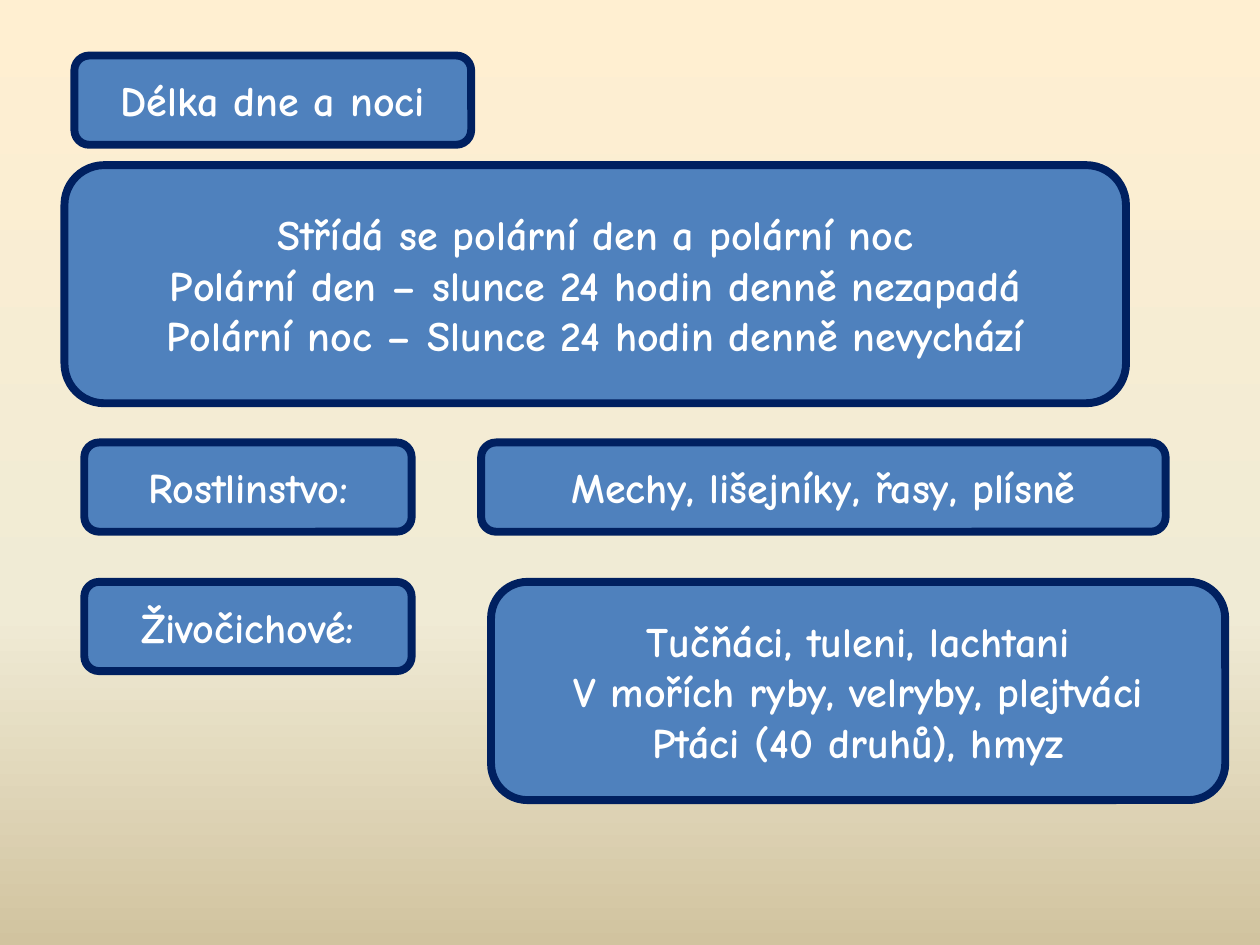
from copy import deepcopy
from pptx import Presentation
from pptx.dml.color import RGBColor as RGB
from pptx.enum.shapes import MSO_SHAPE as Shape
from pptx.enum.text import MSO_ANCHOR as Anchor, PP_ALIGN as Align
from pptx.oxml.ns import qn
from pptx.util import Inches, Pt

BLUE = RGB(0x4F, 0x81, 0xBD)
NAVY = RGB(0x00, 0x20, 0x60)
WHITE = RGB(0xFF, 0xFF, 0xFF)
SKY = [
    (0, RGB(0xFF, 0xEF, 0xD1)),
    (0.65, RGB(0xF0, 0xEB, 0xD5)),
    (1, RGB(0xD1, 0xC3, 0x9F)),
]
FONT = {"name": "Comic Neue", "size": Pt(24), "bold": True}
COLS = 254
DAY, POLAR, PLANTS, BEASTS = 11.2, 33.3, 89.2, 117.3
LOW = 18

CARDS = [
    (13, POLAR, 214, 48, [
        "Střídá se polární den a polární noc",
        "Polární den – slunce 24 hodin denně nezapadá",
        "Polární noc – Slunce 24 hodin denně nevychází",
    ]),
    (15, DAY, 80, LOW, ["Délka dne a noci"]),
    (17, PLANTS, 66, LOW, ["Rostlinstvo:"]),
    (97, PLANTS, 138, LOW, ["Mechy, lišejníky, řasy, plísně"]),
    (17, BEASTS, 66, LOW, ["Živočichové:"]),
    (99, BEASTS, 148, 44, [
        "Tučňáci, tuleni, lachtani",
        "V mořích ryby, velryby, plejtváci",
        "Ptáci (40 druhů), hmyz",
    ]),
]


def paint(slide):
    fill = slide.background.fill
    fill.gradient()
    fill.gradient_angle = 270
    stops = slide.element.find(".//" + qn("a:gsLst"))
    stops.append(deepcopy(stops[-1]))
    for stop, (place, tone) in zip(fill.gradient_stops, SKY):
        stop.position = place
        stop.color.rgb = tone


def add_card(slide, box, lines):
    card = slide.shapes.add_shape(Shape.ROUNDED_RECTANGLE, *box)
    card.shadow.inherit = False
    card.fill.solid()
    card.fill.fore_color.rgb = BLUE
    card.line.color.rgb = NAVY
    card.line.width = Pt(4.5)
    frame = card.text_frame
    frame.word_wrap = True
    frame.vertical_anchor = Anchor.MIDDLE
    frame.text = "\n".join(lines)
    for para in frame.paragraphs:
        para.alignment = Align.CENTER
        for run in para.runs:
            run.font.color.rgb = WHITE
            for key, value in FONT.items():
                setattr(run.font, key, value)


def main():
    deck = Presentation()
    deck.slide_width, deck.slide_height = Inches(10), Inches(7.5)
    slide = deck.slides.add_slide(deck.slide_layouts[6])
    paint(slide)
    unit = deck.slide_width / COLS
    for *cells, lines in CARDS:
        add_card(slide, [round(cell * unit) for cell in cells], lines)
    deck.save("out.pptx")


if __name__ == "__main__":
    main()
